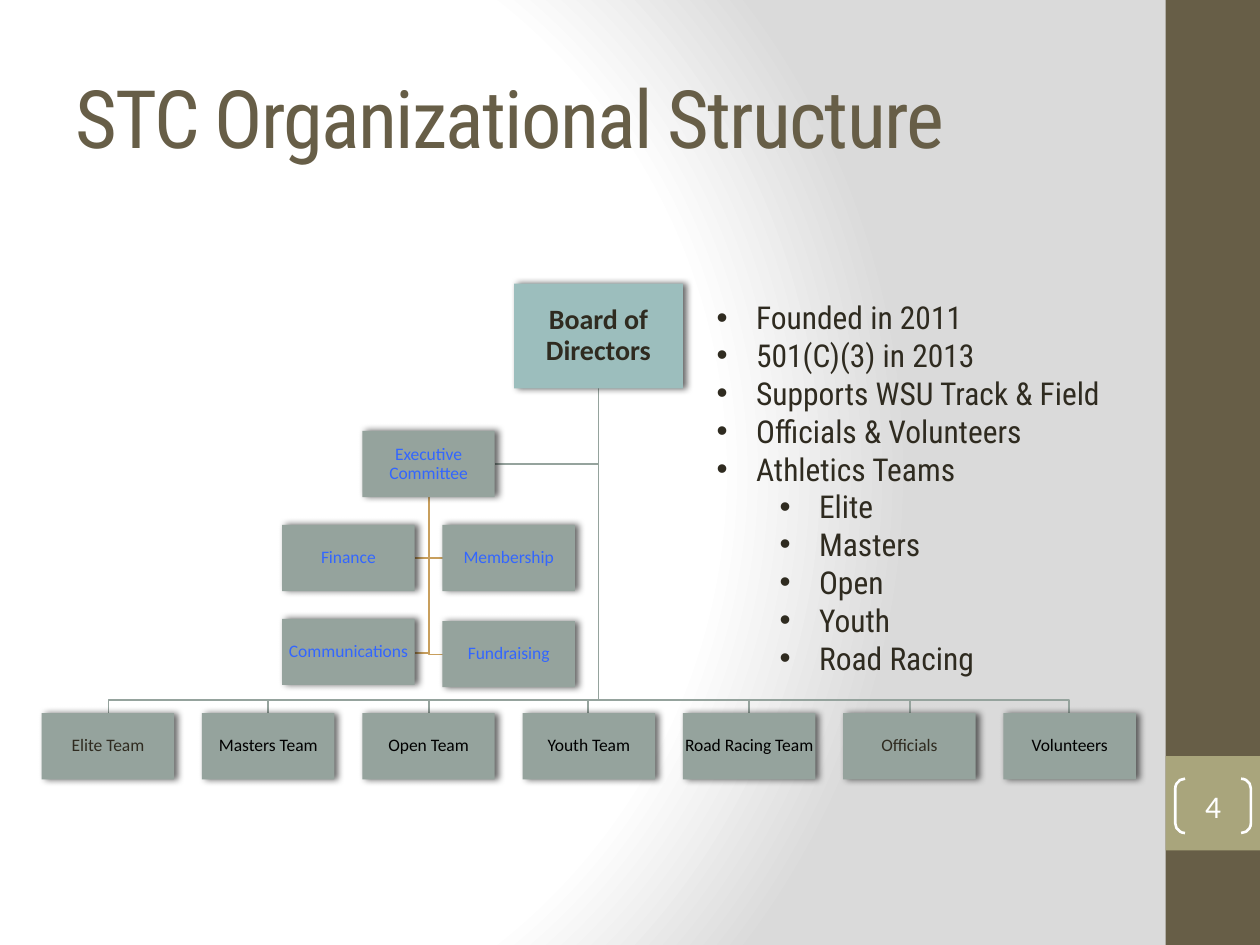
"""Build the STC organizational structure slide."""
import pptx
import pptx.util
import pptx.oxml
import pptx.oxml.ns
from pptx.dml.color import RGBColor
from pptx.enum.shapes import MSO_SHAPE
from pptx.enum.text import MSO_ANCHOR, PP_ALIGN

Pt = pptx.util.Pt

BROWN = RGBColor(0x67, 0x5E, 0x47)
OLIVE = RGBColor(0xA9, 0xA5, 0x7C)
TEAL = RGBColor(0x9C, 0xBE, 0xBD)
SAGE = RGBColor(0x95, 0xA3, 0x9D)
GOLD = RGBColor(0xC8, 0x9F, 0x5D)
INK = RGBColor(0x2F, 0x2B, 0x20)
BLUE = RGBColor(0x33, 0x66, 0xFF)
BLACK = RGBColor(0, 0, 0)
WHITE = RGBColor(0xFF, 0xFF, 0xFF)

TITLE = "STC Organizational Structure"
PAGE_NUMBER = "4"
FACTS = [
    ("Founded in 2011", 0),
    ("501(C)(3) in 2013", 0),
    ("Supports WSU Track & Field", 0),
    ("Officials & Volunteers", 0),
    ("Athletics Teams", 0),
    ("Elite", 1),
    ("Masters", 1),
    ("Open", 1),
    ("Youth", 1),
    ("Road Racing", 1),
]
TEAMS = [
    ("Elite Team", INK),
    ("Masters Team", BLACK),
    ("Open Team", BLACK),
    ("Youth Team", BLACK),
    ("Road Racing Team", BLACK),
    ("Officials", INK),
    ("Volunteers", BLACK),
]
COMMITTEES = [
    ("Finance", -1, 299.9),
    ("Membership", 1, 299.9),
    ("Communications", -1, 353.6),
    ("Fundraising", 1, 354.9),
]

BOX_W, BOX_H, PITCH = 75.7, 37.85, 91.6
TEAM_X, TEAM_Y, BUS_Y = 61.65, 407.5, 399.6
BOARD_X, BOARD_Y, BOARD_W, BOARD_H = 342, 162, 96.5, 60
EXEC_X, EXEC_Y = TEAM_X + 2 * PITCH, 246.2
INDENT, LEVEL_STEP = 22.5, 36

TITLE_FONT = {"name": "Roboto Condensed", "size": Pt(46)}
FACT_FONT = {"name": "Roboto Condensed", "size": Pt(18)}
BOARD_FONT = {"name": "Calibri", "size": Pt(16), "bold": True}
UNIT_FONT = {"name": "Calibri", "size": Pt(10)}
NUMBER_FONT = {"name": "Calibri", "size": Pt(18)}

NAMESPACES = pptx.oxml.ns.nsdecls("a", "p")
BACKGROUND = f"""<p:bg {NAMESPACES}><p:bgPr><a:gradFill rotWithShape="1"><a:gsLst>
<a:gs pos="0"><a:srgbClr val="FFFFFF"/></a:gs>
<a:gs pos="75000"><a:srgbClr val="FFFFFF"/></a:gs>
<a:gs pos="100000"><a:srgbClr val="DADADA"/></a:gs></a:gsLst>
<a:path path="circle"><a:fillToRect l="20000" t="50000" r="100000" b="50000"/></a:path>
</a:gradFill><a:effectLst/></p:bgPr></p:bg>"""
SHADOW = f"""<a:effectLst {NAMESPACES}><a:outerShdw blurRad="{Pt(4)}" dist="{Pt(2)}"
dir="0" rotWithShape="0"><a:srgbClr val="000000"><a:alpha val="60000"/></a:srgbClr>
</a:outerShdw></a:effectLst>"""
BULLETS = [
    f'<a:buFont {NAMESPACES} typeface="Arial"/>',
    f'<a:buChar {NAMESPACES} char="•"/>',
]


def apply(target, values):
    for name, value in values.items():
        setattr(target, name, value)


def add_span(para, text, font, color):
    span = para.add_run()
    span.text = text
    apply(span.font, font)
    span.font.color.rgb = color
    return span


def add_box(slide, preset, place, fill=None):
    box = slide.shapes.add_shape(preset, *map(Pt, place))
    box.shadow.inherit = False
    box.line.fill.background()
    if fill is None:
        box.fill.background()
    else:
        box.fill.solid()
        box.fill.fore_color.rgb = fill
    return box


def center_text(box, text, font, color, inset):
    margins = ("margin_left", "margin_top", "margin_right", "margin_bottom")
    apply(box.text_frame, dict.fromkeys(margins, Pt(inset)))
    apply(box.text_frame, {"word_wrap": True, "vertical_anchor": MSO_ANCHOR.MIDDLE})
    para = box.text_frame.paragraphs[0]
    para.alignment = PP_ALIGN.CENTER
    add_span(para, text, font, color)
    return para


def add_unit(slide, text, center, top, color, fill=SAGE, size=(BOX_W, BOX_H), font=UNIT_FONT):
    box = add_box(slide, MSO_SHAPE.RECTANGLE, (center - size[0] / 2, top, *size), fill)
    properties = box.fill._xPr
    properties.remove(properties.find(pptx.oxml.ns.qn("a:effectLst")))
    properties.append(pptx.oxml.parse_xml(SHADOW))
    center_text(box, text, font, color, 0.7).line_spacing = 0.9


def add_route(slide, points, color):
    builder = slide.shapes.build_freeform(*points[0], scale=Pt(1))
    builder.add_line_segments(points[1:], close=False)
    route = builder.convert_to_shape()
    route.shadow.inherit = False
    route.fill.background()
    route.line.color.rgb = color
    route.line.width = Pt(1)


def add_text_box(slide, place):
    box = slide.shapes.add_textbox(*map(Pt, place))
    box.text_frame.word_wrap = True
    return box.text_frame


def add_chart_of_units(slide):
    for _, side, top in COMMITTEES:
        middle = top + BOX_H / 2
        edge = EXEC_X + side * (PITCH - BOX_W) / 2
        add_route(slide, [(EXEC_X, EXEC_Y + BOX_H), (EXEC_X, middle), (edge, middle)], GOLD)
    start = (BOARD_X, BOARD_Y + BOARD_H)
    exec_middle = EXEC_Y + BOX_H / 2
    add_route(slide, [start, (BOARD_X, exec_middle), (EXEC_X + BOX_W / 2, exec_middle)], SAGE)
    centers = [TEAM_X + index * PITCH for index in range(len(TEAMS))]
    for center in centers:
        add_route(slide, [start, (BOARD_X, BUS_Y), (center, BUS_Y), (center, TEAM_Y)], SAGE)

    add_unit(slide, "Board of Directors", BOARD_X, BOARD_Y, INK, TEAL, (BOARD_W, BOARD_H), BOARD_FONT)
    for center, (name, color) in zip(centers, TEAMS):
        add_unit(slide, name, center, TEAM_Y, color)
    add_unit(slide, "Executive Committee", EXEC_X, EXEC_Y, BLUE)
    for name, side, top in COMMITTEES:
        add_unit(slide, name, EXEC_X + side * PITCH / 2, top, BLUE)


def add_facts(slide):
    frame = add_text_box(slide, (402.5, 167, 256.3, 225.4))
    for index, (text, level) in enumerate(FACTS):
        para = frame.add_paragraph() if index else frame.paragraphs[0]
        para.level = level
        properties = para._p.get_or_add_pPr()
        properties.set("marL", str(Pt(INDENT + level * LEVEL_STEP)))
        properties.set("indent", str(Pt(-INDENT)))
        for bullet in BULLETS:
            properties.append(pptx.oxml.parse_xml(bullet))
        add_span(para, text, FACT_FONT, INK)


def main():
    deck = pptx.Presentation()
    apply(deck, {"slide_width": Pt(720), "slide_height": Pt(540)})
    slide = deck.slides.add_slide(deck.slide_layouts[6])
    slide._element.cSld.insert(0, pptx.oxml.parse_xml(BACKGROUND))

    add_box(slide, MSO_SHAPE.RECTANGLE, (666, 0, 54, 540), BROWN)
    add_box(slide, MSO_SHAPE.RECTANGLE, (666, 432, 54, 54), OLIVE)
    title = add_text_box(slide, (36, 21.6, 554.4, 90))
    title.vertical_anchor = MSO_ANCHOR.MIDDLE
    span = add_span(title.paragraphs[0], TITLE, TITLE_FONT, BROWN)
    span.font._element.set("spc", "-100")

    add_chart_of_units(slide)
    bracket = add_box(slide, MSO_SHAPE.DOUBLE_BRACKET, (671.6, 445, 43.2, 31))
    bracket.adjustments[0] = 0.18
    bracket.line.color.rgb = WHITE
    bracket.line.width = Pt(1.5)
    center_text(bracket, PAGE_NUMBER, NUMBER_FONT, WHITE, 0)
    add_facts(slide)
    deck.save("out.pptx")


if __name__ == "__main__":
    main()
